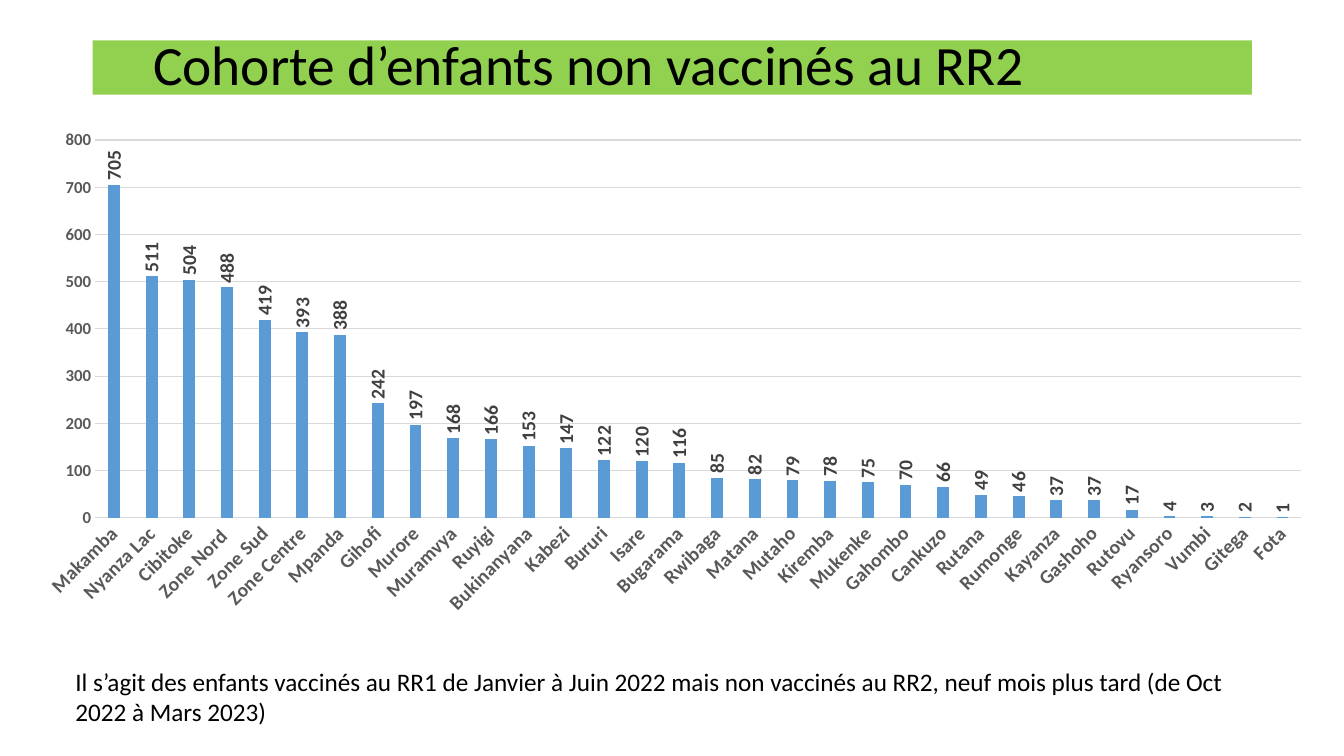
"""Build the slide on the cohort of children not vaccinated with RR2."""
from dataclasses import dataclass

from pptx import Presentation
from pptx.chart.chart import Chart
from pptx.chart.data import CategoryChartData as ChartData
from pptx.dml.color import RGBColor
from pptx.enum.chart import XL_CHART_TYPE as ChartType
from pptx.enum.chart import XL_LABEL_POSITION as LabelPosition
from pptx.enum.chart import XL_TICK_MARK as TickMark
from pptx.enum.shapes import MSO_SHAPE as ShapeKind
from pptx.enum.text import MSO_ANCHOR as Anchor
from pptx.enum.text import PP_ALIGN as Align
from pptx.slide import Slide
from pptx.text.text import Font
from pptx.util import Pt

FONT = "Calibri"
BLACK = RGBColor(0x00, 0x00, 0x00)
GREEN = RGBColor(0x92, 0xD0, 0x50)
BLUE = RGBColor(0x5B, 0x9B, 0xD5)
AXIS_GREY = RGBColor(0x59, 0x59, 0x59)
LABEL_GREY = RGBColor(0x40, 0x40, 0x40)
LINE_GREY = RGBColor(0xD9, 0xD9, 0xD9)

CHILDREN_BY_DISTRICT = {
    "Makamba": 705, "Nyanza Lac": 511, "Cibitoke": 504, "Zone Nord ": 488,
    "Zone Sud": 419, "Zone Centre": 393, "Mpanda": 388, "Gihofi": 242,
    "Murore": 197, "Muramvya": 168, "Ruyigi": 166, "Bukinanyana": 153,
    "Kabezi": 147, "Bururi": 122, "Isare": 120, "Bugarama": 116,
    "Rwibaga": 85, "Matana": 82, "Mutaho": 79, "Kiremba": 78,
    "Mukenke": 75, "Gahombo": 70, "Cankuzo": 66, "Rutana": 49,
    "Rumonge": 46, "Kayanza": 37, "Gashoho": 37, "Rutovu": 17,
    "Ryansoro": 4, "Vumbi": 3, "Gitega": 2, "Fota": 1,
}


@dataclass(frozen=True)
class TextBlock:
    """A rectangle of text, with lengths in points."""

    text: str
    left: float
    top: float
    width: float
    height: float
    size: float
    anchor: Anchor
    line_spacing: float = 1.0
    fill: RGBColor | None = None


TEXT_BLOCKS = (
    TextBlock("\tCohorte d’enfants non vaccinés au RR2",
              66.24, 28.8, 828, 38.88, 39.6, Anchor.MIDDLE, 0.9, GREEN),
    TextBlock("Il s’agit des enfants vaccinés au RR1 de Janvier à Juin 2022 mais "
              "non vaccinés au RR2, neuf mois plus tard (de Oct 2022 à Mars 2023)",
              46.8, 472.32, 872.64, 51.12, 18, Anchor.TOP),
)


def style_font(font: Font, size: float, color: RGBColor, bold: bool = False) -> None:
    """Apply the slide's typeface with a size, colour and weight."""
    font.name = FONT
    font.size = Pt(size)
    font.bold = bold
    font.color.rgb = color


def draw_text(page: Slide, block: TextBlock) -> None:
    """Draw one text block, filled if it has a colour."""
    box = page.shapes.add_shape(ShapeKind.RECTANGLE, Pt(block.left), Pt(block.top),
                                Pt(block.width), Pt(block.height))
    box.shadow.inherit = False
    box.line.fill.background()
    if block.fill is None:
        box.fill.background()
    else:
        box.fill.solid()
        box.fill.fore_color.rgb = block.fill
    frame = box.text_frame
    frame.word_wrap = True
    frame.vertical_anchor = block.anchor
    frame.text = block.text
    para = frame.paragraphs[0]
    para.alignment = Align.LEFT
    para.line_spacing = block.line_spacing
    for span in para.runs:
        style_font(span.font, block.size, BLACK)


def rotate_text(chart: Chart, parent: str, degrees: int) -> None:
    """Turn the text of a chart part by an angle in degrees."""
    for body in chart.element.xpath(f".//{parent}/c:txPr/a:bodyPr"):
        body.set("rot", str(degrees * 60000))
        body.set("vert", "horz")


def style_axes(chart: Chart) -> None:
    """Format the district axis and the value axis."""
    districts, values = chart.category_axis, chart.value_axis
    for axis, size in ((districts, 14), (values, 12)):
        axis.major_tick_mark = TickMark.NONE
        axis.minor_tick_mark = TickMark.NONE
        style_font(axis.tick_labels.font, size, AXIS_GREY, bold=True)
    values.minimum_scale, values.maximum_scale, values.major_unit = 0, 800, 100
    values.tick_labels.number_format = "0"
    values.tick_labels.number_format_is_linked = False
    values.format.line.fill.background()
    for line in (districts.format.line, values.major_gridlines.format.line):
        line.color.rgb = LINE_GREY
        line.width = Pt(0.75)
    rotate_text(chart, "c:catAx", -45)


def draw_chart(page: Slide) -> None:
    """Draw the column chart of children by district."""
    data = ChartData(number_format="0")
    data.categories = list(CHILDREN_BY_DISTRICT)
    data.add_series("Series 1", list(CHILDREN_BY_DISTRICT.values()))
    chart = page.shapes.add_chart(ChartType.COLUMN_CLUSTERED, Pt(14.4), Pt(85.68),
                                  Pt(933.84), Pt(360.72), data).chart
    chart.has_legend = False
    chart.has_title = False
    style_font(chart.font, 10, BLACK)
    style_axes(chart)

    plot = chart.plots[0]
    plot.gap_width = 219
    plot.overlap = -27
    plot.vary_by_categories = False
    columns = plot.series[0]
    columns.invert_if_negative = False
    columns.format.fill.solid()
    columns.format.fill.fore_color.rgb = BLUE

    labels = columns.data_labels
    labels.show_value = True
    labels.position = LabelPosition.OUTSIDE_END
    labels.number_format = "0"
    labels.number_format_is_linked = False
    style_font(labels.font, 14, LABEL_GREY, bold=True)
    rotate_text(chart, "c:dLbls", -90)


def main() -> None:
    """Assemble and save the deck."""
    deck = Presentation()
    deck.slide_width, deck.slide_height = Pt(960), Pt(540)
    page = deck.slides.add_slide(deck.slide_layouts[6])
    for block in TEXT_BLOCKS:
        draw_text(page, block)
    draw_chart(page)
    deck.save("out.pptx")


if __name__ == "__main__":
    main()
